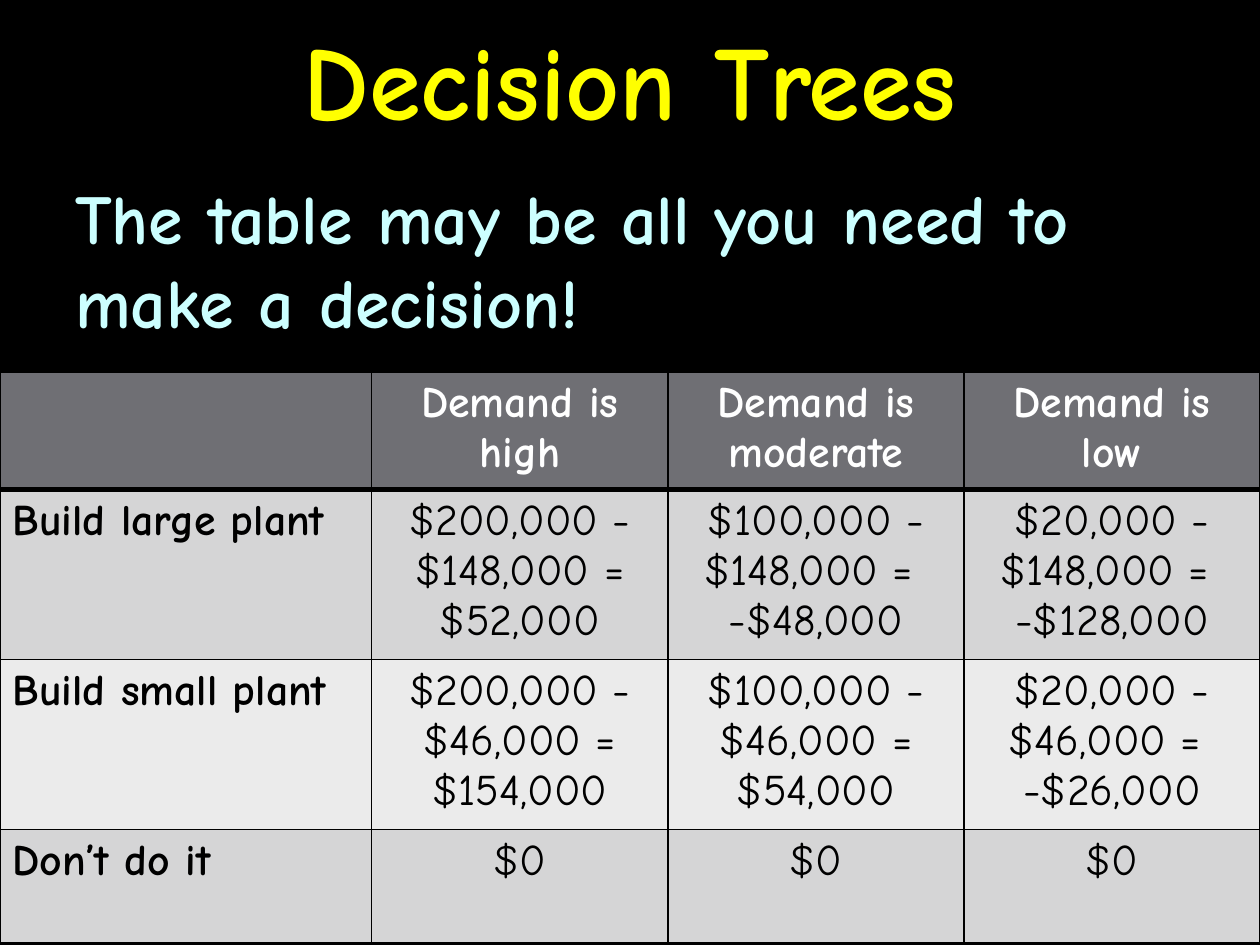
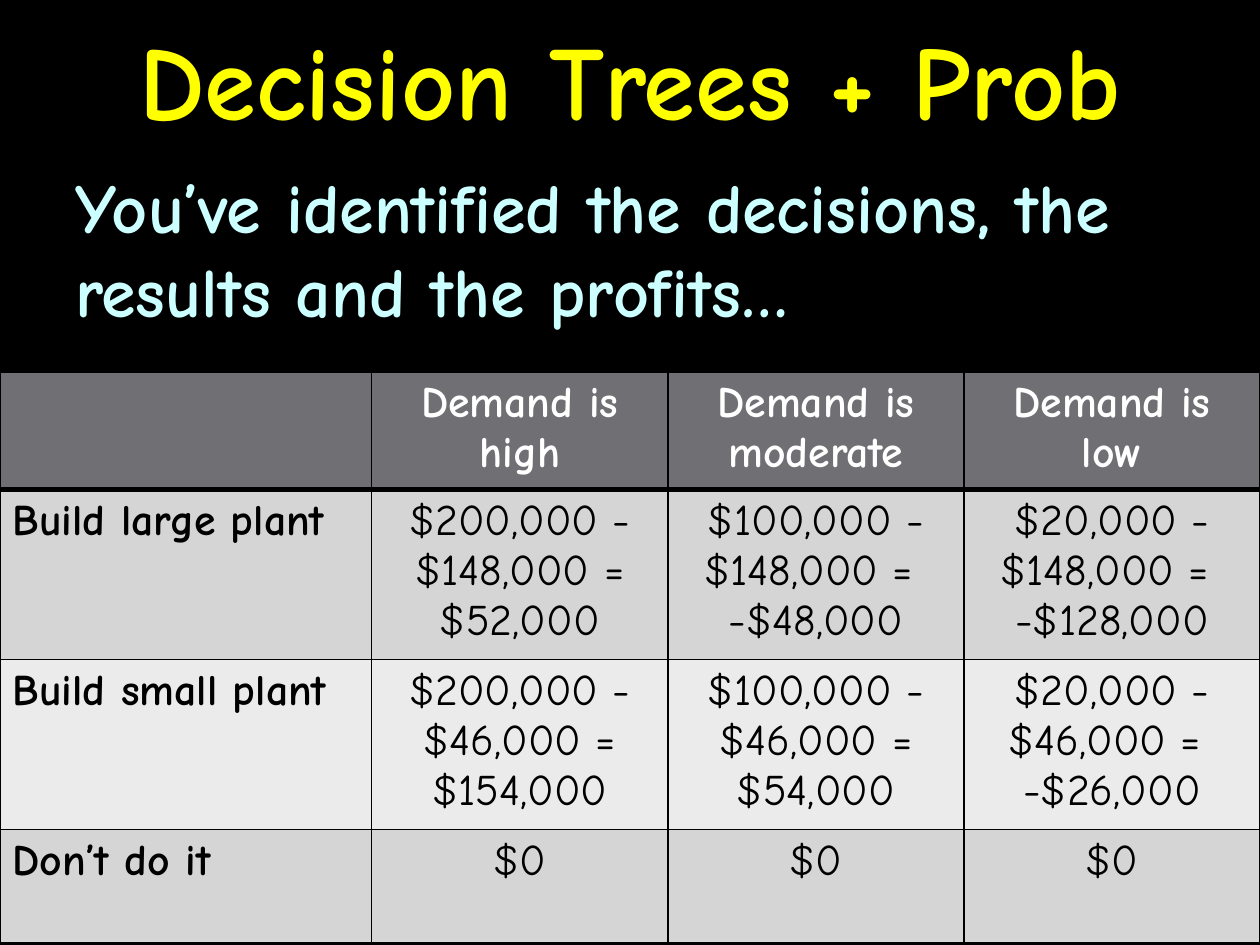
from dataclasses import dataclass

from lxml.etree import SubElement
from pptx import Presentation
from pptx.dml.color import RGBColor
from pptx.enum.text import MSO_ANCHOR, PP_ALIGN
from pptx.oxml.ns import qn
from pptx.util import Pt


@dataclass(frozen=True)
class Theme:
    font: str = "Comic Neue"
    background: str = "000000"
    title: str = "FFFF00"
    statement: str = "CCFFFF"
    header_text: str = "FFFFFF"
    cell_text: str = "000000"
    border: str = "000000"
    header_fill: str = "6F6F74"
    row_fills: tuple = ("D5D5D6", "EBEBEB")
    title_size: int = 60
    statement_size: int = 40
    table_size: int = 25
    thin: int = 1
    thick: int = 3


SLIDE_WIDTH, SLIDE_HEIGHT = 720, 540
TITLE_HEIGHT = 90
TABLE_TOP = 212.5
COLUMN_WIDTHS = (212.4, 169.2, 169.2, 169.2)
ROW_HEIGHTS = (64, 93, 93, 64.5)

# A line break inside a cell starts a new paragraph.
PAYOFFS = (
    ("", "Demand is high", "Demand is moderate", "Demand is low"),
    ("Build large plant", "$200,000 - $148,000 = $52,000",
     "$100,000 - $148,000 = \n-$48,000", "$20,000 - $148,000 = \n-$128,000"),
    ("Build small plant", "$200,000 - $46,000 = $154,000",
     "$100,000 - $46,000 = $54,000", "$20,000 - $46,000 = \n-$26,000"),
    ("Don’t do it", "$0", "$0", "$0"),
)

# Title, statement, top of the statement
SLIDES = (
    ("Decision Trees",
     "The table may be all you need to make a decision!", 96),
    ("Decision Trees + Prob",
     "You’ve identified the decisions, the results and the profits…", 90),
)


class Deck:
    def __init__(self, theme):
        self.theme = theme
        self.presentation = Presentation()
        self.presentation.slide_width = Pt(SLIDE_WIDTH)
        self.presentation.slide_height = Pt(SLIDE_HEIGHT)
        self.slide = None

    def add_slide(self):
        title_only = self.presentation.slide_layouts[5]
        self.slide = self.presentation.slides.add_slide(title_only)
        background = self.slide.background.fill
        background.solid()
        background.fore_color.rgb = RGBColor.from_string(self.theme.background)

    def set_text(self, frame, text, size, color, bold=True, align=PP_ALIGN.LEFT):
        frame.text = text
        frame.word_wrap = True
        for paragraph in frame.paragraphs:
            paragraph.alignment = align
            paragraph.font.name = self.theme.font
            paragraph.font.size = Pt(size)
            paragraph.font.bold = bold
            paragraph.font.color.rgb = RGBColor.from_string(color)

    def title(self, text):
        heading = self.slide.shapes.title
        heading.left, heading.top = Pt(0), Pt(0)
        heading.width, heading.height = Pt(SLIDE_WIDTH), Pt(TITLE_HEIGHT)
        heading.text_frame.vertical_anchor = MSO_ANCHOR.MIDDLE
        self.set_text(heading.text_frame, text, self.theme.title_size,
                      self.theme.title, align=PP_ALIGN.CENTER)

    def statement(self, text, top):
        box = self.slide.shapes.add_textbox(Pt(36), Pt(top), Pt(648), Pt(444))
        self.set_text(box.text_frame, text, self.theme.statement_size,
                      self.theme.statement)
        box.text_frame.paragraphs[0].space_before = Pt(8)

    def borders(self, cell, top, bottom):
        properties = cell._tc.get_or_add_tcPr()
        thin = self.theme.thin
        for side, width in (("L", thin), ("R", thin), ("T", top), ("B", bottom)):
            line = SubElement(properties, qn(f"a:ln{side}"), w=str(Pt(width)))
            fill = SubElement(line, qn("a:solidFill"))
            SubElement(fill, qn("a:srgbClr"), val=self.theme.border)

    def payoff_table(self, rows):
        theme = self.theme
        table = self.slide.shapes.add_table(
            len(rows), len(COLUMN_WIDTHS), Pt(0), Pt(TABLE_TOP),
            Pt(SLIDE_WIDTH), Pt(sum(ROW_HEIGHTS))).table
        for column, width in zip(table.columns, COLUMN_WIDTHS):
            column.width = Pt(width)
        for row, height in zip(table.rows, ROW_HEIGHTS):
            row.height = Pt(height)
        for r, row in enumerate(rows):
            header = r == 0
            row_fill = theme.header_fill if header else theme.row_fills[(r - 1) % 2]
            for c, text in enumerate(row):
                cell = table.cell(r, c)
                self.borders(cell, theme.thick if r == 1 else theme.thin,
                             theme.thick if header else theme.thin)
                cell.fill.solid()
                cell.fill.fore_color.rgb = RGBColor.from_string(row_fill)
                self.set_text(cell.text_frame, text, theme.table_size,
                              theme.header_text if header else theme.cell_text,
                              bold=header or c == 0,
                              align=PP_ALIGN.CENTER if c else PP_ALIGN.LEFT)


def main():
    deck = Deck(Theme())
    for title, statement, statement_top in SLIDES:
        deck.add_slide()
        deck.title(title)
        deck.statement(statement, statement_top)
        deck.payoff_table(PAYOFFS)
    deck.presentation.save("out.pptx")


if __name__ == "__main__":
    main()
